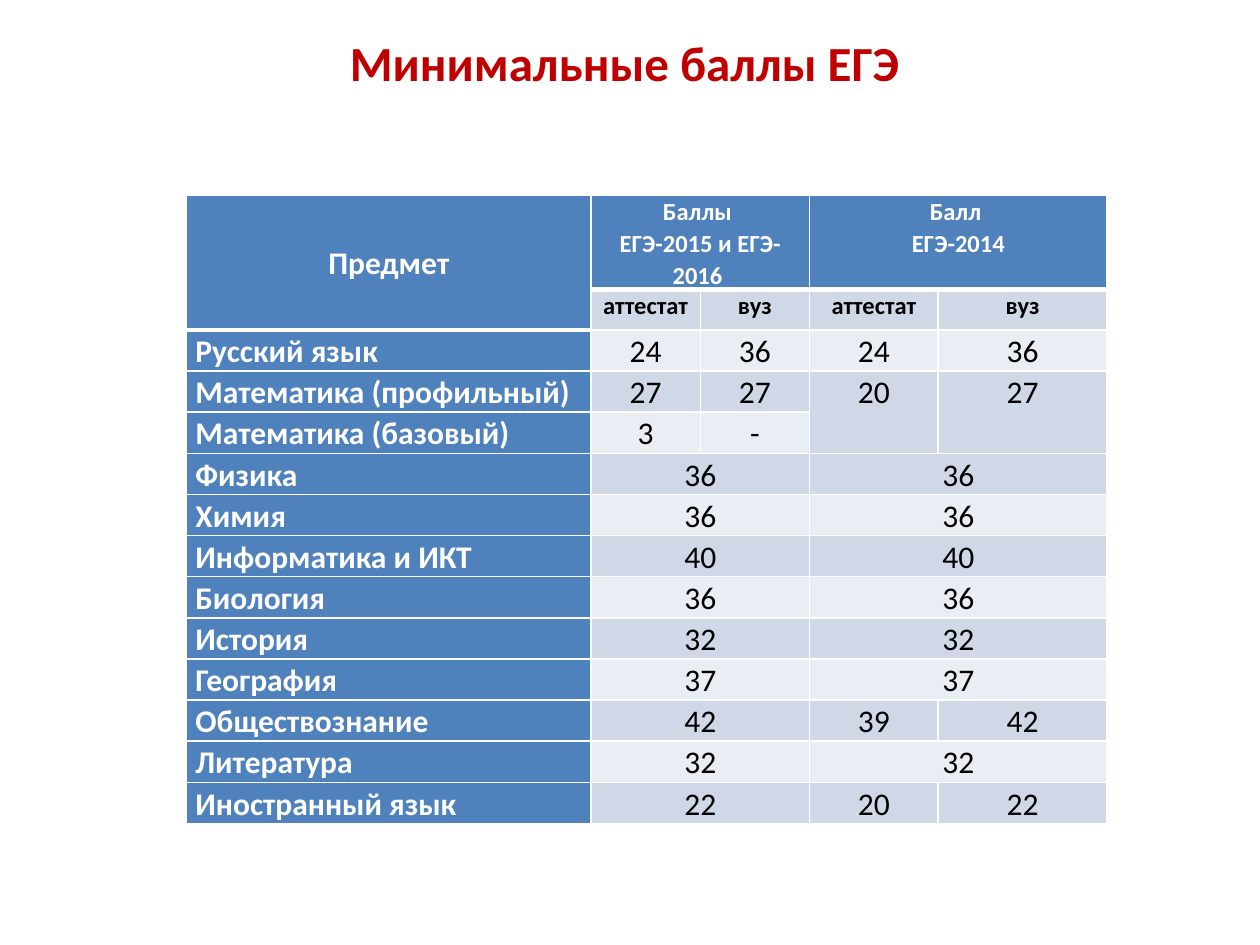
from pptx import Presentation
from pptx.dml.color import RGBColor
from pptx.enum.text import MSO_ANCHOR, MSO_AUTO_SIZE, PP_ALIGN
from pptx.oxml.ns import qn
from pptx.util import Pt
from lxml import etree

LEFT, CENTER = PP_ALIGN.LEFT, PP_ALIGN.CENTER
TOP, MIDDLE = MSO_ANCHOR.TOP, MSO_ANCHOR.MIDDLE
GROW = MSO_AUTO_SIZE.SHAPE_TO_FIT_TEXT

RED = RGBColor(0xC0, 0x00, 0x00)
BLUE = RGBColor(0x4F, 0x81, 0xBD)
DARK_BAND = RGBColor(0xD0, 0xD8, 0xE8)
LIGHT_BAND = RGBColor(0xE9, 0xED, 0xF4)
WHITE = RGBColor(0xFF, 0xFF, 0xFF)
BLACK = RGBColor(0x00, 0x00, 0x00)

TITLE_FORMAT = {"size": Pt(28), "bold": True}
HEADER_FORMAT = {"size": Pt(14), "bold": True}
SUBJECT_FORMAT = {"size": Pt(18), "bold": True}
SCORE_FORMAT = {"size": Pt(18), "bold": False}

# Cells that continue the one to the left or the one above
ACROSS, UP = "<", "^"
SCORES = [
    ["Предмет", "Баллы \nЕГЭ-2015 и ЕГЭ- 2016 ", ACROSS, "Балл \nЕГЭ-2014", ACROSS],
    [UP, "аттестат", "вуз", "аттестат", "вуз"],
    ["Русский язык", "24", "36", "24", "36"],
    ["Математика (профильный)", "27", "27", "20", "27"],
    ["Математика (базовый)", "3", "-", UP, UP],
    ["Физика", "36", ACROSS, "36", ACROSS],
    ["Химия", "36", ACROSS, "36", ACROSS],
    ["Информатика и ИКТ", "40", ACROSS, "40", ACROSS],
    ["Биология", "36", ACROSS, "36", ACROSS],
    ["История", "32", ACROSS, "32", ACROSS],
    ["География", "37", ACROSS, "37", ACROSS],
    ["Обществознание", "42", ACROSS, "39", "42"],
    ["Литература", "32", ACROSS, "32", ACROSS],
    ["Иностранный язык", "22", ACROSS, "20", "22"],
]
COLUMN_WIDTHS = [231, 62.5, 62.5, 73.5, 96.5]
ROW_HEIGHTS = [44.3, 22.9] + [23.5] * 12


def write_text(frame, text, align, color, font_format, spacing=1.0):
    for index, line in enumerate(text.split("\n")):
        para = frame.add_paragraph() if index else frame.paragraphs[0]
        para.alignment = align
        para.line_spacing = spacing
        span = para.add_run()
        span.text = line
        span.font.name = "Calibri"
        span.font.color.rgb = color
        for name, value in font_format.items():
            setattr(span.font, name, value)


def is_header(row, column):
    return row == 0 or (row == 1 and column == 0)


def set_borders(cell, widths):
    properties = cell._tc.get_or_add_tcPr()
    for side, width in widths.items():
        line = etree.SubElement(properties, qn(f"a:ln{side}"), w=str(Pt(width)))
        fill = etree.SubElement(line, qn("a:solidFill"))
        etree.SubElement(fill, qn("a:srgbClr"), val=str(WHITE))


def style_cell(cell, row, column):
    # A thick rule closes the header
    top = 3 if is_header(row - 1, column) and not is_header(row, column) else 1
    bottom = 3 if is_header(row, column) and (row or column) else 1
    set_borders(cell, {"L": 1, "R": 1, "T": top, "B": 3 if (row, column) == (0, 0) else bottom})
    band = LIGHT_BAND if row and row % 2 == 0 else DARK_BAND
    cell.fill.solid()
    cell.fill.fore_color.rgb = BLUE if column == 0 or row == 0 else band
    margins = {"margin_left": Pt(5), "margin_right": Pt(5), "margin_top": 0, "margin_bottom": 0}
    for name, value in margins.items():
        setattr(cell, name, value)
    cell.vertical_anchor = MIDDLE if (row, column) == (0, 0) else TOP


def fill_cell(cell, text, row, column):
    if column == 0:
        font_format = SUBJECT_FORMAT
    else:
        font_format = HEADER_FORMAT if row < 2 else SCORE_FORMAT
    align = LEFT if column == 0 and row else CENTER
    color = WHITE if column == 0 or row == 0 else BLACK
    write_text(cell.text_frame, text, align, color, font_format, 1.07)


def add_title(page, left, top, width, height):
    box = page.shapes.add_textbox(Pt(left), Pt(top), Pt(width), Pt(height))
    box.text_frame.word_wrap = True
    box.text_frame.auto_size = GROW
    write_text(box.text_frame, "Минимальные баллы ЕГЭ ", CENTER, RED, TITLE_FORMAT)


def add_score_table(page, left, top, width, height):
    table = page.shapes.add_table(
        len(SCORES), len(COLUMN_WIDTHS), Pt(left), Pt(top), Pt(width), Pt(height)
    ).table
    for column, size in zip(table.columns, COLUMN_WIDTHS):
        column.width = Pt(size)
    for row, size in zip(table.rows, ROW_HEIGHTS):
        row.height = Pt(size)
    for row, texts in enumerate(SCORES):
        for column, text in enumerate(texts):
            cell = table.cell(row, column)
            style_cell(cell, row, column)
            if text == ACROSS:
                table.cell(row, column - 1).merge(cell)
            elif text == UP:
                table.cell(row - 1, column).merge(cell)
            else:
                fill_cell(cell, text, row, column)


def main():
    deck = Presentation()
    deck.slide_width, deck.slide_height = Pt(720), Pt(540)
    page = deck.slides.add_slide(deck.slide_layouts[6])
    add_title(page, 28.5, 15, 663, 41)
    add_score_table(page, 106.7, 111.5, sum(COLUMN_WIDTHS), sum(ROW_HEIGHTS))
    deck.save("out.pptx")


if __name__ == "__main__":
    main()
